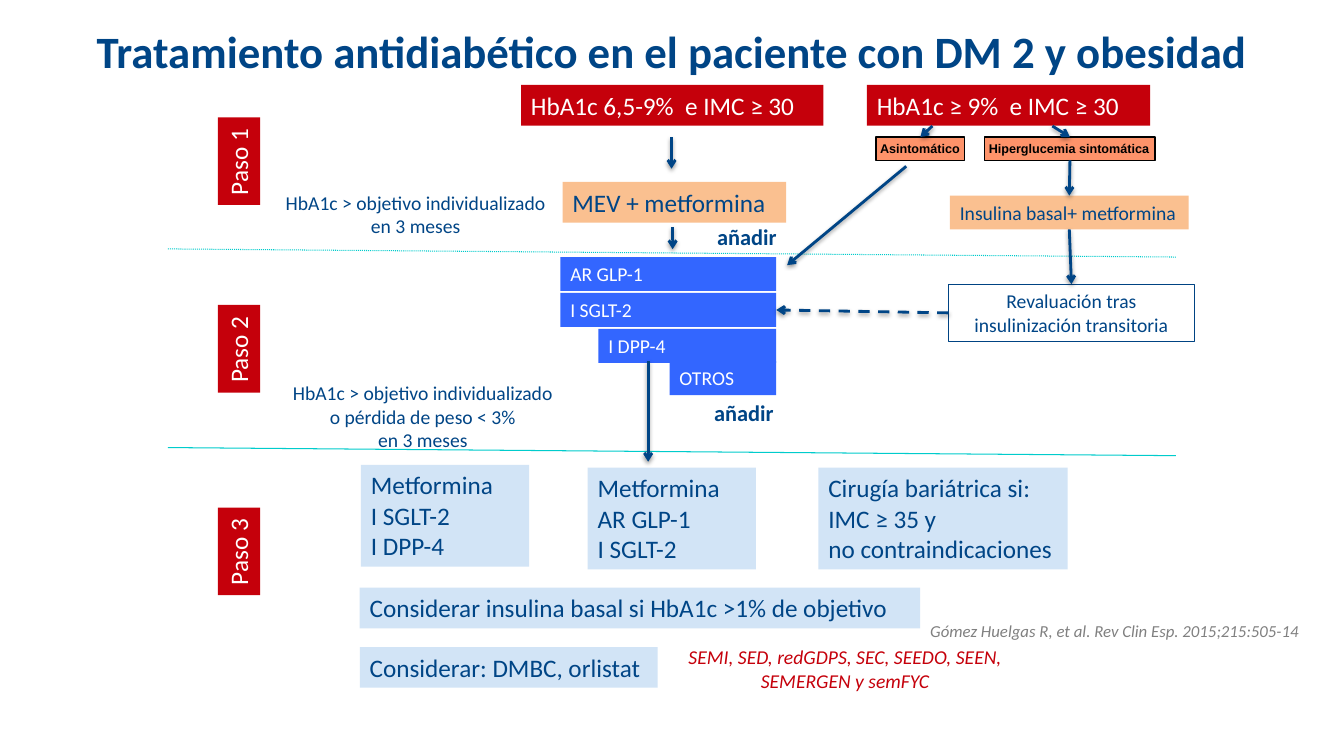
from lxml.etree import SubElement
from pptx import Presentation
from pptx.dml.color import RGBColor
from pptx.enum.dml import MSO_LINE
from pptx.enum.shapes import MSO_CONNECTOR, MSO_SHAPE
from pptx.enum.text import MSO_ANCHOR, MSO_AUTO_SIZE, PP_ALIGN
from pptx.oxml.ns import qn
from pptx.util import Pt

NAVY, RED, WHITE, BLACK = "004586", "C5000B", "FFFFFF", "000000"
PEACH, SALMON, BLUE, PALE = "FAC090", "FE936A", "3366FF", "D2E4F6"
CYAN, GREY = "00CCCC", "808080"
TOP, LEFT, BOTTOM, RIGHT = range(4)


def rgb(color):
    return RGBColor.from_string(color)


def write(tf, text, size=18, color=NAVY, font="Calibri", bold=False, italic=False,
          align=PP_ALIGN.LEFT, anchor=MSO_ANCHOR.TOP, wrap=True, inset=None):
    """Fill a text frame, one paragraph per line of text."""
    tf.auto_size = MSO_AUTO_SIZE.NONE
    tf.word_wrap = wrap
    tf.vertical_anchor = anchor
    if inset is not None:
        tf.margin_left = tf.margin_right = tf.margin_top = tf.margin_bottom = Pt(inset)
    for i, line in enumerate(text.split("\n")):
        p = tf.add_paragraph() if i else tf.paragraphs[0]
        p.alignment = align
        r = p.add_run()
        r.text = line
        r.font.name, r.font.size = font, Pt(size)
        r.font.bold, r.font.italic = bold, italic
        r.font.color.rgb = rgb(color)


def add_box(s, text, x, y, w, h, fill=None, line=None, line_width=1, rotation=0, **fmt):
    sp = s.shapes.add_shape(MSO_SHAPE.RECTANGLE, Pt(x), Pt(y), Pt(w), Pt(h))
    sp.shadow.inherit = False
    sp.rotation = rotation
    if fill:
        sp.fill.solid()
        sp.fill.fore_color.rgb = rgb(fill)
    else:
        sp.fill.background()
    if line:
        sp.line.color.rgb = rgb(line)
        sp.line.width = Pt(line_width)
    else:
        sp.line.fill.background()
    write(sp.text_frame, text, **fmt)
    return sp


def add_label(s, text, x, y, w, h, **fmt):
    sp = s.shapes.add_textbox(Pt(x), Pt(y), Pt(w), Pt(h))
    write(sp.text_frame, text, **fmt)


def add_line(s, start, end, color=NAVY, width=2, dash=None, arrow=True):
    """Draw a line between ends given as (x, y) or as (shape, side)."""
    points = [(0, 0) if hasattr(a, "shape_id") else (a, b) for a, b in (start, end)]
    (x1, y1), (x2, y2) = points
    c = s.shapes.add_connector(MSO_CONNECTOR.STRAIGHT, Pt(x1), Pt(y1), Pt(x2), Pt(y2))
    for (target, side), connect in ((start, c.begin_connect), (end, c.end_connect)):
        if hasattr(target, "shape_id"):
            connect(target, side)
    c.line.color.rgb = rgb(color)
    c.line.width = Pt(width)
    if dash:
        c.line.dash_style = dash
    sp_pr = c._element.spPr
    effects = SubElement(sp_pr, qn("a:effectLst"))
    if arrow:
        SubElement(sp_pr.find(qn("a:ln")), qn("a:tailEnd"), type="arrow")
        shadow = SubElement(effects, qn("a:outerShdw"), blurRad=str(Pt(3.1)),
                            dist=str(Pt(1.6)), dir="5400000", rotWithShape="0")
        black = SubElement(shadow, qn("a:srgbClr"), val=BLACK)
        SubElement(black, qn("a:alpha"), val="38000")


def add_steps(s):
    for number, y in enumerate((100, 234, 378.7), 1):
        add_box(s, f"Paso {number}", 139.5, y, 62.6, 30.2, RED, rotation=270,
                color=WHITE, wrap=False)
    for y, dash in ((177.8, MSO_LINE.ROUND_DOT), (319.7, None)):
        add_line(s, (120, y), (840, y + 5.8), CYAN, 0.75, dash, arrow=False)


def add_drugs(s):
    """Stack the add-on drugs, flush right, and return their boxes."""
    right = 554.5
    drugs = (("AR GLP-1", 400.3, 183.6), ("I SGLT-2", 400.3, 209.3),
             ("I DPP-4", 427.5, 235), ("OTROS", 478.3, 258))
    return [add_box(s, name, x, y, right - x, 24.2, BLUE, size=14, color=WHITE)
            for name, x, y in drugs]


def add_third_step(s):
    for text, x, y, w, h in (
            ("Metformina\nI SGLT-2\nI DPP-4", 257.8, 332, 120.2, 72.7),
            ("Metformina\nAR GLP-1\nI SGLT-2", 419.8, 334, 120.2, 72.7),
            ("Cirugía bariátrica si:\nIMC ≥ 35 y\nno contraindicaciones", 584.6, 334, 178, 72.7),
            ("Considerar insulina basal si HbA1c >1% de objetivo", 257, 419.8, 400.3, 29),
            ("Considerar: DMBC, orlistat", 257, 462.2, 212.8, 29)):
        add_box(s, text, x, y, w, h, PALE)


def main():
    prs = Presentation()
    prs.slide_width, prs.slide_height = Pt(960), Pt(540)
    s = prs.slides.add_slide(prs.slide_layouts[5])
    title = s.shapes.title
    title.left, title.top, title.width, title.height = Pt(48), Pt(12.2), Pt(864), Pt(47.5)
    write(title.text_frame, "Tratamiento antidiabético en el paciente con DM 2 y obesidad",
          size=32, bold=True, align=PP_ALIGN.CENTER, anchor=MSO_ANCHOR.MIDDLE)

    add_steps(s)
    add_box(s, "HbA1c 6,5-9%  e IMC ≥ 30", 372.2, 60.7, 216, 29, RED, color=WHITE)
    add_box(s, "HbA1c ≥ 9%  e IMC ≥ 30", 619.2, 60.7, 202.3, 29, RED, color=WHITE)
    add_box(s, "MEV + metformina", 401.8, 130, 159.8, 29, PEACH)
    drugs = add_drugs(s)
    add_third_step(s)

    asymptomatic, symptomatic = [
        add_box(s, text, x, 97.9, w, 16.6, SALMON, BLACK, size=9, color=BLACK, font="Arial",
                bold=True, anchor=MSO_ANCHOR.MIDDLE, wrap=False, inset=2.9)
        for text, x, w in (("Asintomático", 625.7, 63.4),
                           ("Hiperglucemia sintomática", 703.4, 121.7))]
    insulin = add_box(s, "Insulina basal+ metformina", 678.5, 139.7, 170.6, 24.2, PEACH,
                      size=14, wrap=False)
    review = add_box(s, "Revaluación tras insulinización transitoria", 677.5, 203, 175.7, 41,
                     line="004383", line_width=0.75, size=14, align=PP_ALIGN.CENTER)

    for start, end in (((479.7, 98), (479.7, 120.5)), ((480.5, 162), (480.5, 178)),
                       ((463, 257.8), (463, 329.8)), ((647.3, 118.8), (562.3, 189.4)),
                       ((666, 90), (asymptomatic, TOP)), ((751.7, 90), (symptomatic, TOP)),
                       ((symptomatic, BOTTOM), (insulin, TOP)),
                       ((insulin, BOTTOM), (review, TOP))):
        add_line(s, start, end)
    add_line(s, (review, LEFT), (drugs[1], RIGHT), dash=MSO_LINE.DASH)

    centred = {"align": PP_ALIGN.CENTER, "wrap": False}
    add_label(s, "HbA1c > objetivo individualizado\nen 3 meses",
              195.8, 132.5, 202.3, 41, size=14, **centred)
    add_label(s, "HbA1c > objetivo individualizado\no pérdida de peso < 3%\nen 3 meses",
              200.9, 268.6, 202.3, 58.3, size=14, **centred)
    for x, y in ((504.7, 156.2), (502.6, 281.5)):
        add_label(s, "añadir", x, y, 57.6, 26.6, size=16, bold=True, **centred)
    add_label(s, "SEMI, SED, redGDPS, SEC, SEEDO, SEEN, SEMERGEN y semFYC",
              463.3, 457.2, 280.8, 41, size=14, color=RED, italic=True, align=PP_ALIGN.CENTER)
    add_label(s, "Gómez Huelgas R, et al. Rev Clin Esp. 2015;215:505-14",
              26.6, 440, 908.6, 23, size=12, color=GREY, italic=True, align=PP_ALIGN.RIGHT)
    prs.save("out.pptx")


if __name__ == "__main__":
    main()
